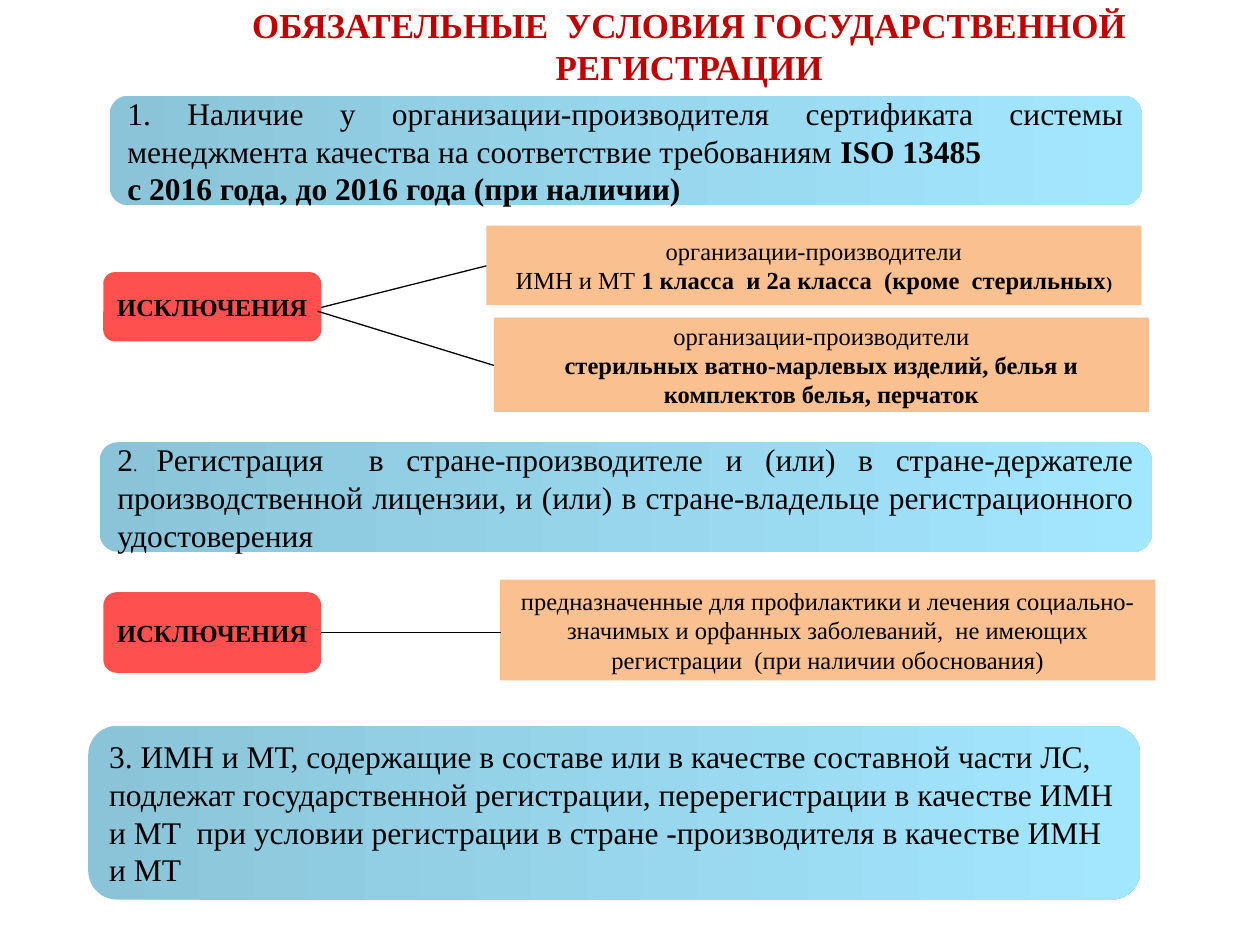
from pptx import Presentation
from pptx.dml.color import RGBColor
from pptx.enum.shapes import MSO_CONNECTOR as Connector, MSO_SHAPE as Shape
from pptx.enum.text import MSO_ANCHOR as Anchor, PP_ALIGN as Align
from pptx.oxml.ns import qn
from pptx.util import Inches, Pt
from lxml.etree import SubElement

FONT = "Times New Roman"
BLACK, TITLE_RED = "000000", "C00000"
LABEL_RED, ORANGE = "FF5050", "FAC090"
BLUE_START, BLUE_END = "8BC4D9", "A3E7FF"


def color(value):
    return RGBColor.from_string(value)


def write(box, paragraphs, size, align, text_color=BLACK, wrap=True):
    """Each paragraph is a list of (text, bold, size or None) spans."""
    frame = box.text_frame
    frame.word_wrap = wrap
    frame.vertical_anchor = Anchor.MIDDLE
    for number, spans in enumerate(paragraphs):
        para = frame.add_paragraph() if number else frame.paragraphs[0]
        para.alignment = align
        para.font.name = FONT
        para.font.size = Pt(size)
        para.font.color.rgb = color(text_color)
        for text, bold, span_size in spans:
            span = para.add_run()
            span.text = text
            span.font.bold = bold
            if span_size:
                span.font.size = Pt(span_size)


def plain(text, bold=False):
    return [(text, bold, None)]


def add_box(page, kind, bounds):
    box = page.shapes.add_shape(kind, *map(Inches, bounds))
    box.shadow.inherit = False
    box.line.fill.background()
    return box


def add_condition(page, bounds, paragraphs, align):
    box = add_box(page, Shape.ROUNDED_RECTANGLE, bounds)
    box.fill.gradient()
    box.fill.gradient_angle = 0
    for stop, value in zip(box.fill.gradient_stops, (BLUE_START, BLUE_END)):
        stop.color.rgb = color(value)
    write(box, paragraphs, 18, align)


def add_exception_label(page, top, height):
    box = add_box(page, Shape.ROUNDED_RECTANGLE, (0.82, top, 1.73, height))
    box.fill.solid()
    box.fill.fore_color.rgb = color(LABEL_RED)
    write(box, [plain("ИСКЛЮЧЕНИЯ", True)], 14, Align.CENTER, wrap=False)


def add_exception(page, left, top, height, paragraphs):
    box = add_box(page, Shape.RECTANGLE, (left, top, 5.2, height))
    box.fill.solid()
    box.fill.fore_color.rgb = color(ORANGE)
    write(box, paragraphs, 14, Align.CENTER)


def add_line(page, *ends):
    line = page.shapes.add_connector(Connector.STRAIGHT, *map(Inches, ends))
    line.line.color.rgb = color(BLACK)
    line.line.width = Pt(0.75)
    SubElement(line._element.spPr, qn("a:effectLst"))


def main():
    deck = Presentation()
    deck.slide_width, deck.slide_height = Inches(10), Inches(7.5)
    page = deck.slides.add_slide(deck.slide_layouts[6])

    # Title
    title = page.shapes.add_textbox(*map(Inches, (1.14, 0.05, 8.66, 0.63)))
    write(title, [plain("ОБЯЗАТЕЛЬНЫЕ  УСЛОВИЯ ГОСУДАРСТВЕННОЙ РЕГИСТРАЦИИ", True)],
          20, Align.CENTER, TITLE_RED)

    # First condition and its exceptions
    add_condition(page, (0.87, 0.76, 8.19, 0.87), [
        [("1. Наличие у организации-производителя сертификата системы "
          "менеджмента качества на соответствие требованиям ", False, None),
         ("ISO 13485", True, None)],
        plain("с 2016 года, до 2016 года (при наличии)", True),
    ], Align.JUSTIFY)
    add_exception_label(page, 2.16, 0.55)
    add_exception(page, 3.86, 1.79, 0.63, [
        plain("организации-производители"),
        [("ИМН и МТ ", False, None),
         ("1 класса  и 2а класса  (кроме  стерильных", True, None),
         (")", True, 10)],
    ])
    add_exception(page, 3.92, 2.52, 0.75, [
        plain("организации-производители"),
        plain("стерильных ватно-марлевых изделий, белья и "
              "комплектов белья, перчаток", True),
    ])
    add_line(page, 2.55, 2.44, 3.86, 2.11)
    add_line(page, 2.52, 2.47, 3.92, 2.9)

    # Second condition and its exception
    add_condition(page, (0.79, 3.51, 8.35, 0.87), [
        [("2", False, None),
         (". ", False, 10),
         ("Регистрация  в стране-производителе и (или) в стране-держателе "
          "производственной лицензии, и (или) в стране-владельце "
          "регистрационного удостоверения", False, None)],
    ], Align.JUSTIFY)
    add_exception_label(page, 4.7, 0.64)
    add_exception(page, 3.97, 4.6, 0.8, [
        plain("предназначенные для профилактики и лечения "
              "социально-значимых и орфанных заболеваний,  не имеющих "
              "регистрации  (при наличии обоснования)"),
    ])
    add_line(page, 2.55, 5.02, 3.98, 5.02)

    # Third condition
    add_condition(page, (0.7, 5.76, 8.35, 1.38), [
        plain("3. ИМН и МТ, содержащие в составе или в качестве составной "
              "части ЛС, подлежат государственной регистрации, "
              "перерегистрации в качестве ИМН и МТ  при условии регистрации "
              "в стране -производителя в качестве ИМН и МТ"),
    ], Align.LEFT)

    deck.save("out.pptx")


if __name__ == "__main__":
    main()
